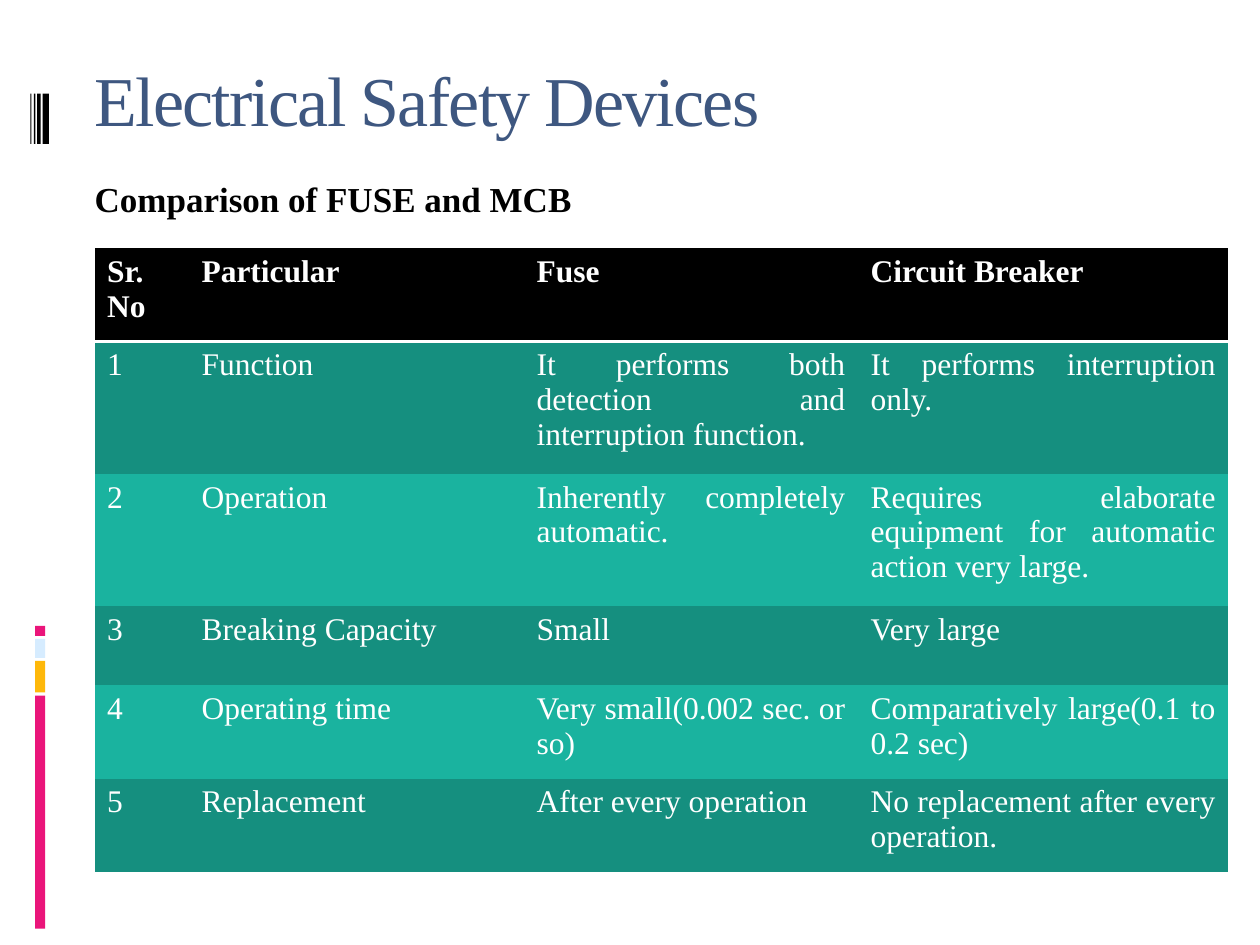
from pptx import Presentation
from pptx.dml.color import RGBColor
from pptx.enum.shapes import MSO_SHAPE as Shape
from pptx.enum.text import PP_ALIGN as Align
from pptx.oxml import parse_xml
from pptx.oxml.ns import nsdecls, qn
from pptx.util import Pt

BLACK = RGBColor(0x00, 0x00, 0x00)
WHITE = RGBColor(0xFF, 0xFF, 0xFF)
NAVY = RGBColor(0x3E, 0x57, 0x80)
PINK = RGBColor(0xEA, 0x15, 0x7A)
AMBER = RGBColor(0xFE, 0xB8, 0x0A)
PALE_BLUE = RGBColor(0xD6, 0xEC, 0xFF)
DARK_TEAL = RGBColor(0x15, 0x8F, 0x7F)
TEAL = RGBColor(0x1A, 0xB3, 0x9F)

FONT = "Times New Roman"
NO_STYLE = "{2D5ABB26-0587-4C30-8999-92F81FD0307C}"

LEFT = 54
COLUMN_WIDTHS = (54, 191.5, 190.8, 211.7)
ROW_HEIGHTS = (53.3, 75.6, 75.6, 45.4, 53.3, 53.3)
COMPARISON = (
    ("Sr. No", "Particular", "Fuse", "Circuit Breaker"),
    ("1", "Function", "It performs both detection and interruption function.",
     "It performs interruption only."),
    ("2", "Operation", "Inherently completely automatic.",
     "Requires elaborate equipment for automatic action very large."),
    ("3", "Breaking Capacity", "Small", "Very large"),
    ("4", "Operating time", "Very small(0.002 sec. or so)",
     "Comparatively large(0.1 to 0.2 sec)"),
    ("5", "Replacement", "After every operation",
     "No replacement after every operation."),
)


def write(frame, text, *, size=18, color=WHITE, bold=False,
          align=Align.LEFT, spacing=None):
    paragraph = frame.paragraphs[0]
    paragraph.alignment = align
    run = paragraph.add_run()
    run.text = text
    run.font.name = FONT
    run.font.size = Pt(size)
    run.font.bold = bold
    run.font.color.rgb = color
    if spacing is not None:
        run.font._element.set("spc", str(round(spacing * 100)))


def add_bar(slide, left, top, width, height, color):
    bar = slide.shapes.add_shape(
        Shape.RECTANGLE, Pt(left), Pt(top), Pt(width), Pt(height))
    bar.shadow.inherit = False
    bar.fill.solid()
    bar.fill.fore_color.rgb = color
    bar.line.fill.background()


def add_heading(slide, top, height, text, **text_format):
    box = slide.shapes.add_textbox(Pt(LEFT), Pt(top), Pt(600), Pt(height))
    frame = box.text_frame
    frame.word_wrap = True
    frame.margin_left = frame.margin_right = 0
    frame.margin_top = frame.margin_bottom = 0
    write(frame, text, **text_format)


def underline_cell(cell):
    # The bottom border has to come before the fill in the cell properties
    cell._tc.get_or_add_tcPr().insert(0, parse_xml(
        f'<a:lnB {nsdecls("a")} w="{Pt(2)}"><a:solidFill>'
        f'<a:srgbClr val="{WHITE}"/></a:solidFill></a:lnB>'))


def add_comparison(slide, top):
    table = slide.shapes.add_table(
        len(ROW_HEIGHTS), len(COLUMN_WIDTHS), Pt(LEFT), Pt(top),
        Pt(sum(COLUMN_WIDTHS)), Pt(sum(ROW_HEIGHTS))).table
    table._tbl.tblPr.find(qn("a:tableStyleId")).text = NO_STYLE
    for column, width in zip(table.columns, COLUMN_WIDTHS):
        column.width = Pt(width)
    for row, height in zip(table.rows, ROW_HEIGHTS):
        row.height = Pt(height)

    for r, entries in enumerate(COMPARISON):
        header = r == 0
        band = BLACK if header else DARK_TEAL if r % 2 else TEAL
        for c, entry in enumerate(entries):
            cell = table.cell(r, c)
            cell.fill.solid()
            cell.fill.fore_color.rgb = band
            justified = not header and c > 0
            write(cell.text_frame, entry, bold=header,
                  align=Align.JUSTIFY if justified else Align.LEFT)
            if header:
                underline_cell(cell)


def main():
    prs = Presentation()
    prs.slide_width, prs.slide_height = Pt(720), Pt(540)
    slide = prs.slides.add_slide(prs.slide_layouts[6])

    # Coloured bars down the left edge
    for top, height, color in ((397.5, 133.2, PINK), (377.7, 18, AMBER),
                               (365.1, 10.8, PALE_BLUE), (357.7, 5.7, PINK)):
        add_bar(slide, 20, top, 5.8, height, color)

    # Black stripes beside the title
    for left, width in ((24.4, 3.6), (21.2, 2), (19.4, 0.9), (17.4, 0.6)):
        add_bar(slide, left, 53.5, width, 28.8, BLACK)

    # Headings
    add_heading(slide, 32.4, 46, "Electrical Safety Devices",
                size=40, color=NAVY, spacing=-1)
    add_heading(slide, 101.6, 24, "Comparison of FUSE and MCB",
                size=20, color=BLACK, bold=True, align=Align.JUSTIFY)

    # Comparison table
    add_comparison(slide, 141.8)

    prs.save("out.pptx")


if __name__ == "__main__":
    main()
